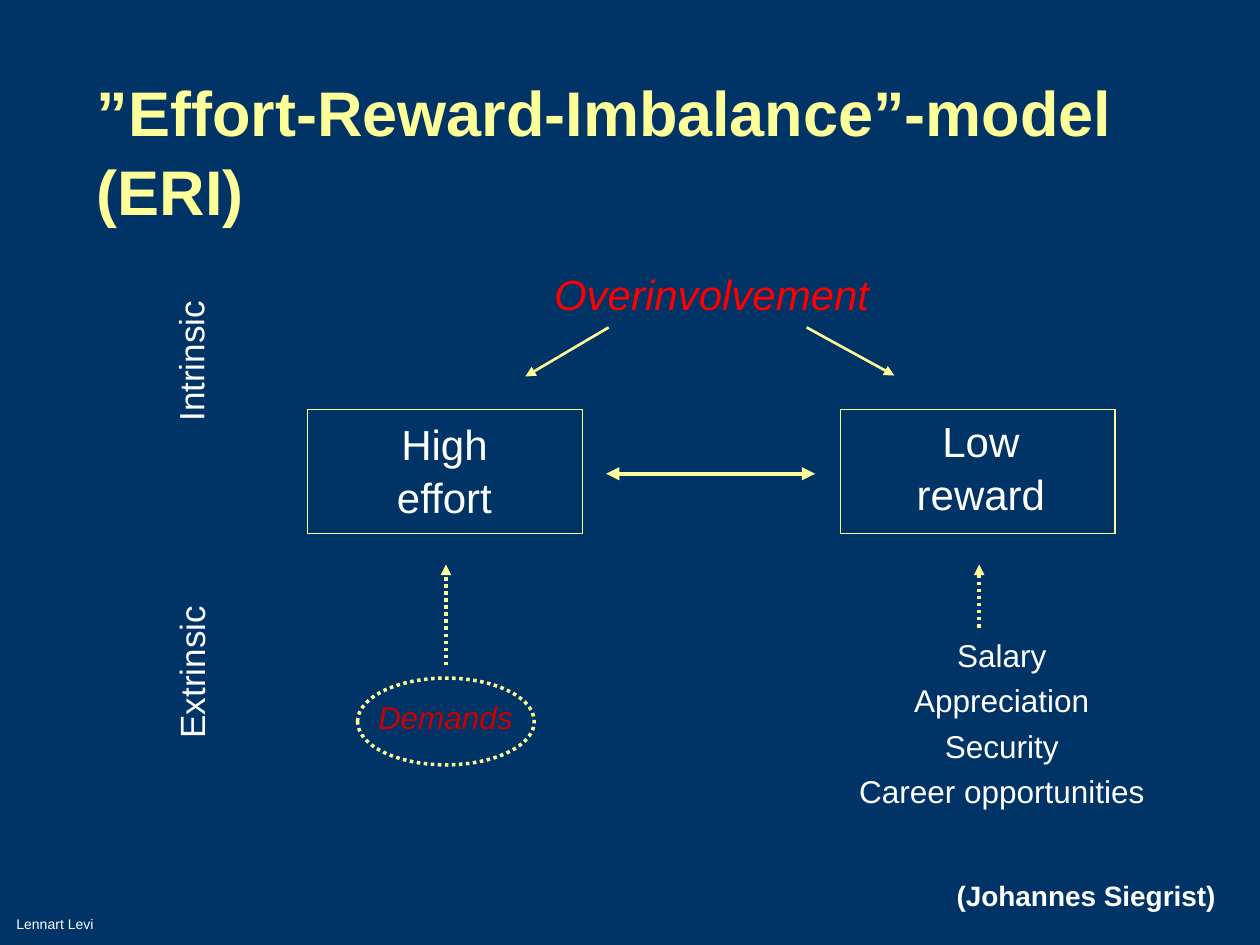
from pptx import Presentation
from pptx.dml.color import RGBColor
from pptx.enum import dml, shapes, text
from pptx.oxml.ns import qn
from pptx.util import Cm, Pt
from lxml import etree

NAVY = RGBColor(0x00, 0x33, 0x66)
YELLOW = RGBColor(0xFF, 0xFF, 0x99)
WHITE = RGBColor(0xFF, 0xFF, 0xFF)
RED = RGBColor(0xFF, 0x00, 0x00)
DARK_RED = RGBColor(0xCC, 0x00, 0x00)
LEFT, CENTER, RIGHT = text.PP_ALIGN.LEFT, text.PP_ALIGN.CENTER, text.PP_ALIGN.RIGHT
DOTTED = dml.MSO_LINE.ROUND_DOT


def write(shape, box, words, size, color, align=CENTER, bold=False, italic=False, spacing=1.0):
    shape.left, shape.top, shape.width, shape.height = [Cm(value) for value in box]
    frame = shape.text_frame
    frame.text = words
    frame.word_wrap = True
    frame.auto_size = text.MSO_AUTO_SIZE.NONE
    frame.vertical_anchor = text.MSO_ANCHOR.TOP
    for paragraph in frame.paragraphs:
        paragraph.alignment = align
        paragraph.line_spacing = spacing
        paragraph.space_before = Pt(0 if paragraph is frame.paragraphs[0] else size * 0.24)
        font = paragraph.runs[0].font
        font.name, font.size, font.bold, font.italic = "Arial", Pt(size), bold, italic
        font.color.rgb = color


def style_line(line, width, dash=None):
    line.color.rgb = YELLOW
    line.width = Pt(width)
    if dash:
        line.dash_style = dash


presentation = Presentation()
presentation.slide_width, presentation.slide_height = Cm(25.4), Cm(19.05)
slide = presentation.slides.add_slide(presentation.slide_layouts[1])
slide.background.fill.solid()
slide.background.fill.fore_color.rgb = NAVY

# Title and the intrinsic factor
write(slide.shapes.title, (1.7, 1.27, 21.59, 1.27), "”Effort-Reward-Imbalance”-model (ERI)",
      36, YELLOW, LEFT, bold=True, spacing=1.05)
body = slide.placeholders[1]
write(body, (9.8, 5.28, 9.09, 1.27), "Overinvolvement", 24, RED, italic=True)
properties = body.text_frame.paragraphs[0]._p.get_or_add_pPr()
properties.set("marL", "0")
properties.set("indent", "0")
etree.SubElement(properties, qn("a:buNone"))

# Boxes for effort and reward, ellipse for demands
for kind, box, width, dash in (
    (shapes.MSO_SHAPE.RECTANGLE, (6.2, 8.26, 5.54, 2.49), 0.75, None),
    (shapes.MSO_SHAPE.RECTANGLE, (16.94, 8.26, 5.54, 2.49), 0.75, None),
    (shapes.MSO_SHAPE.OVAL, (7.21, 13.67, 3.56, 1.75), 2, DOTTED),
):
    shape = slide.shapes.add_shape(kind, *[Cm(value) for value in box])
    shape.shadow.inherit = False
    shape.fill.background()
    style_line(shape.line, width, dash)

# Labels
for words, box, size, color, italic, spacing in (
    ("High effort", (6.99, 8.26, 3.94, 2.97), 24, WHITE, False, 1.05),
    ("Low reward", (17.55, 8.2, 4.45, 2.74), 24, WHITE, False, 1.05),
    ("Demands", (7.29, 13.94, 3.38, 1.37), 18, DARK_RED, True, 1.0),
    ("Salary\nAppreciation\nSecurity\nCareer opportunities",
     (16.69, 12.7, 7.01, 3.61), 18, WHITE, False, 1.0),
):
    label = slide.shapes.add_textbox(0, 0, 0, 0)
    write(label, box, words, size, color, italic=italic, spacing=spacing)

# Sideways row names
for words, box in (
    ("Intrinsic", (2.36, 6.73, 2.95, 1.09)),
    ("Extrinsic", (2.26, 13, 3.18, 1.09)),
):
    label = slide.shapes.add_textbox(0, 0, 0, 0)
    write(label, box, words, 20, WHITE, LEFT)
    label.text_frame.word_wrap = False
    label.rotation = 270

# Arrows
for start, end, width, dash, heads in (
    ((12.22, 9.55), (16.43, 9.55), 2.5, None, ("headEnd", "tailEnd")),
    ((8.99, 13.41), (8.99, 11.38), 2, DOTTED, ("tailEnd",)),
    ((19.74, 12.65), (19.74, 11.38), 2, DOTTED, ("tailEnd",)),
    ((12.27, 6.6), (10.59, 7.59), 1.5, None, ("tailEnd",)),
    ((16.26, 6.6), (18.03, 7.57), 1.5, None, ("tailEnd",)),
):
    arrow = slide.shapes.add_connector(
        shapes.MSO_CONNECTOR.STRAIGHT, *[Cm(value) for value in start + end])
    style_line(arrow.line, width, dash)
    for head in heads:
        etree.SubElement(arrow.line._get_or_add_ln(), qn("a:" + head), type="triangle")
    etree.SubElement(arrow._element.spPr, qn("a:effectLst"))

# Credits
source = slide.shapes.add_textbox(0, 0, 0, 0)
write(source, (11.63, 17.58, 13.13, 0.94), "(Johannes Siegrist)", 16, WHITE, RIGHT, bold=True)
author = slide.shapes.add_textbox(0, 0, 0, 0)
write(author, (0.08, 17.73, 8.05, 1.27), "Lennart Levi", 8, WHITE, LEFT)
author.text_frame.margin_top = Cm(0.73)

presentation.save("out.pptx")
